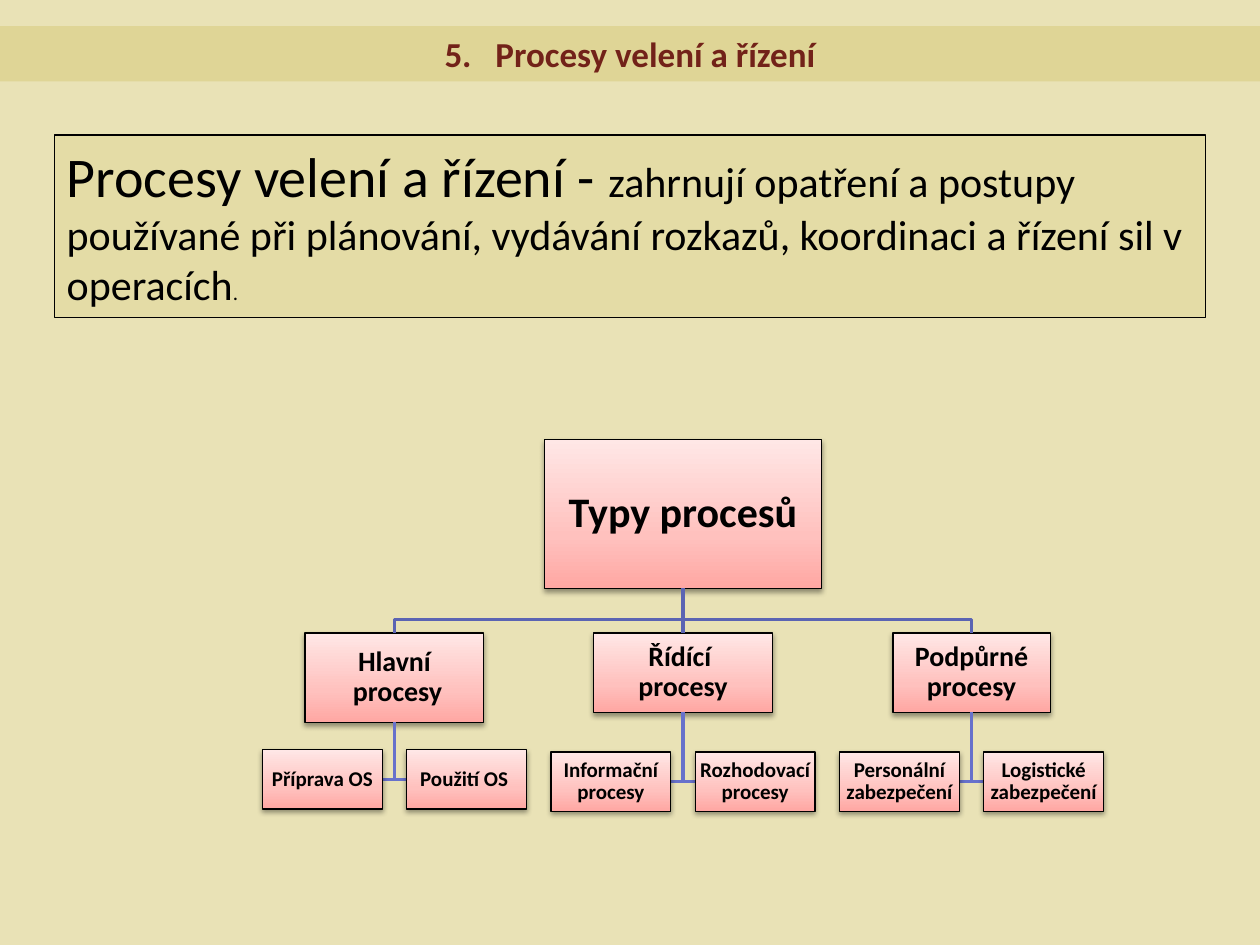
from pptx import Presentation
from pptx.dml.color import RGBColor
from pptx.enum.shapes import MSO_CONNECTOR, MSO_SHAPE
from pptx.enum.text import MSO_ANCHOR, MSO_AUTO_SIZE, PP_ALIGN
from pptx.oxml import parse_xml
from pptx.oxml.ns import nsdecls
from pptx.util import Pt

RECTANGLE = MSO_SHAPE.RECTANGLE
STRAIGHT = MSO_CONNECTOR.STRAIGHT
CENTER, LEFT = PP_ALIGN.CENTER, PP_ALIGN.LEFT
MIDDLE = MSO_ANCHOR.MIDDLE
NO_AUTOFIT = MSO_AUTO_SIZE.NONE
TITLE_ONLY = 5
BOTTOM_SITE, TOP_SITE = 2, 0

FONT = "Calibri"
BLACK = "000000"
BRANCH_LINK, LEAF_LINK = "5B64B3", "6771CB"
BOX_STOPS = [(0, "FFA7A3"), (35, "FFC1BE"), (100, "FFE7E6")]

# Branch: lines, width, height, top of its leaves, leaf labels
BRANCHES = [
    (["Hlavní", " procesy"], 102.2, 51.1, 177.2, ["Příprava OS", "Použití OS "]),
    (["Řídící ", "procesy"], 102.2, 45.4, 178.5,
     ["Informační procesy", "Rozhodovací procesy"]),
    (["Podpůrné procesy"], 90, 45.4, 178.5,
     ["Personální zabezpečení", "Logistické zabezpečení"]),
]


def color(hex_code):
    return RGBColor.from_string(hex_code)


def add_run(paragraph, text, size, hex_code=BLACK, bold=False):
    run = paragraph.add_run()
    run.text = text
    run.font.name = FONT
    run.font.size = Pt(size)
    run.font.bold = bold
    run.font.color.rgb = color(hex_code)
    return run


def place_title(slide, left, top, width, height):
    title = slide.shapes.title
    title.left, title.top = Pt(left), Pt(top)
    title.width, title.height = Pt(width), Pt(height)
    title.fill.solid()
    title.fill.fore_color.rgb = color("DFD596")
    title.text_frame.auto_size = NO_AUTOFIT
    heading = title.text_frame.paragraphs[0]
    heading.alignment = CENTER
    add_run(heading, "5.", 20, "722219", True)
    # One widened space separates the number from the heading
    gap = add_run(heading, " ", 20, "722219", True)
    gap.font._element.set("spc", "900")
    add_run(heading, "Procesy velení a řízení", 20, "722219", True)


def place_definition(slide, left, top, width, height):
    definition = slide.shapes.add_textbox(Pt(left), Pt(top), Pt(width), Pt(height))
    definition.fill.solid()
    definition.fill.fore_color.rgb = color("E4DCA6")
    definition.line.color.rgb = color(BLACK)
    definition.line.width = Pt(0.75)
    definition.text_frame.word_wrap = True
    sentence = definition.text_frame.paragraphs[0]
    sentence.alignment = LEFT
    add_run(sentence, "Procesy velení a řízení - ", 32)
    add_run(sentence, "zahrnují opatření a postupy používané při plánování, "
            "vydávání rozkazů, koordinaci a řízení sil v operacích", 24)
    add_run(sentence, ".", 12)


def style_box(box):
    box.line.color.rgb = color(BLACK)
    box.line.width = Pt(0.75)
    stops = "".join(
        f'<a:gs pos="{pos * 1000}"><a:srgbClr val="{code}"/></a:gs>'
        for pos, code in BOX_STOPS)
    gradient = parse_xml(
        f'<a:gradFill {nsdecls("a")} rotWithShape="1"><a:gsLst>{stops}</a:gsLst>'
        '<a:lin ang="16200000" scaled="1"/></a:gradFill>')
    shadow = parse_xml(
        f'<a:effectLst {nsdecls("a")}><a:outerShdw blurRad="{Pt(3.1)}" '
        f'dist="{Pt(1.6)}" dir="5400000" rotWithShape="0"><a:srgbClr val="{BLACK}">'
        '<a:alpha val="38000"/></a:srgbClr></a:outerShdw></a:effectLst>')
    properties = box._element.spPr
    properties.insert(2, gradient)
    properties.append(shadow)


def add_box(slide, center, top, width, height, lines, size):
    box = slide.shapes.add_shape(
        RECTANGLE, Pt(center - width / 2), Pt(top), Pt(width), Pt(height))
    style_box(box)
    frame = box.text_frame
    frame.word_wrap = True
    frame.vertical_anchor = MIDDLE
    frame.margin_left = frame.margin_right = Pt(1)
    frame.margin_top = frame.margin_bottom = Pt(1)
    label = frame.paragraphs[0]
    label.alignment = CENTER
    label.line_spacing = 0.9
    for number, line in enumerate(lines):
        if number:
            label.add_line_break()
        add_run(label, line, size, bold=True)
    return box


def add_bent_link(slide, points, hex_code):
    start, *bends = [(Pt(x), Pt(y)) for x, y in points]
    builder = slide.shapes.build_freeform(*start)
    builder.add_line_segments(bends, close=False)
    link = builder.convert_to_shape()
    link.shadow.inherit = False
    link.fill.background()
    link.line.color.rgb = color(hex_code)
    link.line.width = Pt(2)


def add_straight_link(slide, parent, child, hex_code):
    link = slide.shapes.add_connector(STRAIGHT, 0, 0, 0, 0)
    link.begin_connect(parent, BOTTOM_SITE)
    link.end_connect(child, TOP_SITE)
    link.line.color.rgb = color(hex_code)
    link.line.width = Pt(2)
    link._element.spPr.append(parse_xml(f'<a:effectLst {nsdecls("a")}/>'))


def place_leaves(slide, center, branch_bottom, top, labels):
    width, height, gap = 68.4, 33.9, 14
    middle = top + height / 2
    for side, label in zip((-1, 1), labels):
        add_bent_link(slide, [(center, branch_bottom), (center, middle),
                              (center + side * gap / 2, middle)], LEAF_LINK)
        add_box(slide, center + side * (width + gap) / 2, top, width, height,
                [label], 12)


def place_process_tree(slide, left, top, width, height):
    root_center = left + width / 2
    root_height = height * 0.4
    root_bottom = top + root_height
    bus, branch_top = root_bottom + 18, root_bottom + 25.5
    pitch = 164.9

    # Root
    root = add_box(slide, root_center, top, 158.4, root_height, ["Typy procesů"], 24)

    # Branches with their leaves
    for index, (lines, box_width, box_height, leaf_top, leaves) in enumerate(BRANCHES):
        center = root_center + (index - 1) * pitch
        branch = add_box(slide, center, branch_top, box_width, box_height, lines, 16)
        if center == root_center:
            add_straight_link(slide, root, branch, BRANCH_LINK)
        else:
            add_bent_link(slide, [(root_center, root_bottom), (root_center, bus),
                                  (center, bus), (center, branch_top)], BRANCH_LINK)
        place_leaves(slide, center, branch_top + box_height, top + leaf_top, leaves)


def main():
    deck = Presentation()
    deck.slide_width, deck.slide_height = Pt(720), Pt(540)
    slide = deck.slides.add_slide(deck.slide_layouts[TITLE_ONLY])
    slide.background.fill.solid()
    slide.background.fill.fore_color.rgb = color("E9E2B6")

    place_title(slide, 0, 15, 720, 31.5)
    place_definition(slide, 31, 77.2, 658, 104.2)
    place_process_tree(slide, 150.3, 251.2, 480, 212.4)
    deck.save("out.pptx")


if __name__ == "__main__":
    main()
